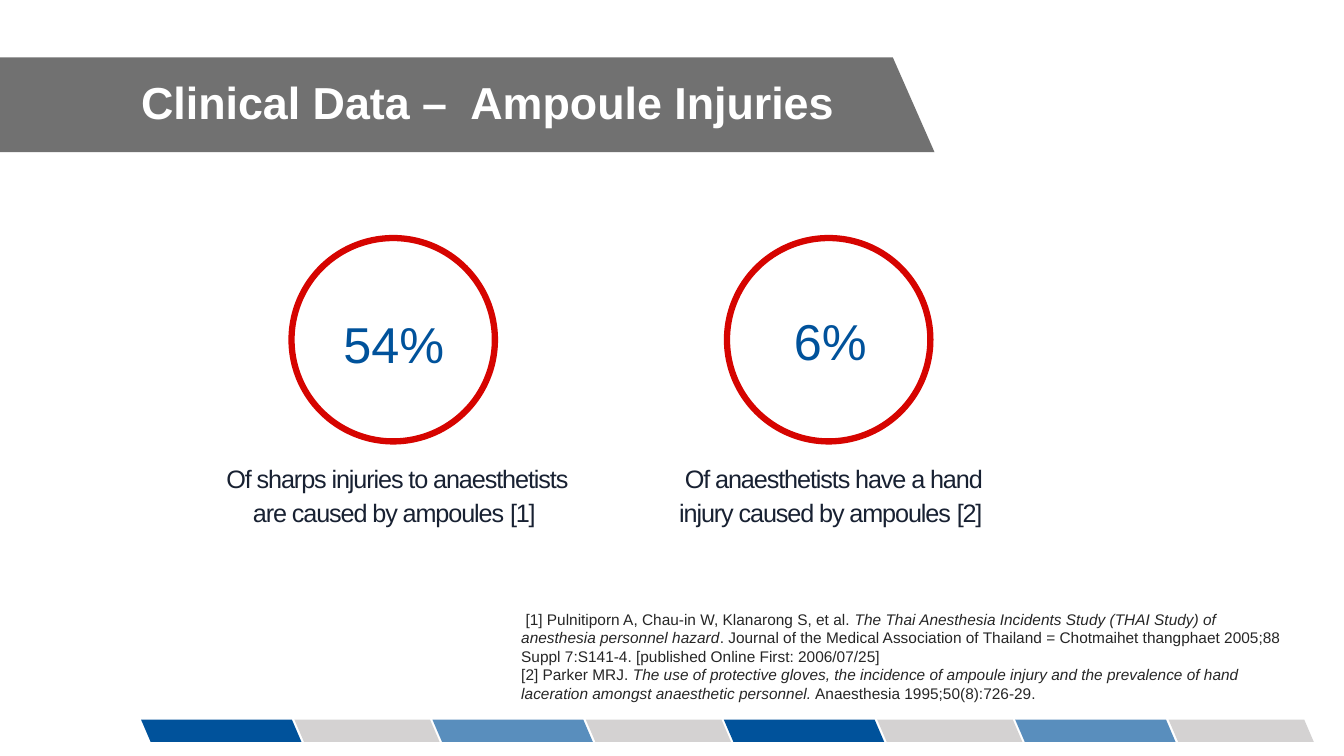
import pptx
import pptx.util
import pptx.dml.color
import pptx.enum.shapes
import pptx.enum.text
import pptx.oxml
import pptx.oxml.ns

Inches, Pt = pptx.util.Inches, pptx.util.Pt
KIND = pptx.enum.shapes.MSO_SHAPE
ALIGN = pptx.enum.text.PP_ALIGN
ANCHOR = pptx.enum.text.MSO_ANCHOR

WIDE, HIGH = 13.33, 7.5
FONT = "Arial"
HUES = {"dark": "262626", "white": "FFFFFF", "blue": "00529B",
        "grey": "757070", "red": "D60400", "navy": "182132"}

# Boxes are (left, top, width, height) in percent of the slide.
TITLE = "Clinical Data –  Ampoule Injuries"
BANNER = (-6.75, 7.6, 76.29, 12.53)
HEAD = (10.5, 9.07, 60.54, 9.6)

STATS = [
    {"ring": (21.46, 31.07, 15.6, 27.73),
     "value": "54%", "spot": (24.16, 41.2, 10.13, 8.27),
     "label": "Of sharps injuries to anaesthetists are caused by ampoules ",
     "cite": "[1]", "below": (15, 60.53, 28.51, 9.33)},
    {"ring": (53.86, 31.07, 15.6, 27.73),
     "value": "6%", "spot": (56.64, 40.8, 10.13, 8.27),
     "label": "Of anaesthetists have a hand injury caused by ampoules ",
     "cite": "[2]", "below": (48.76, 60.53, 25.96, 9.33)},
]

# Each reference is authors, work (italic), journal.
REFS = [
    (" [1] Pulnitiporn A, Chau-in W, Klanarong S, et al. ",
     "The Thai Anesthesia Incidents Study (THAI Study) of anesthesia "
     "personnel hazard",
     ". Journal of the Medical Association of Thailand = Chotmaihet "
     "thangphaet 2005;88 Suppl 7:S141-4. [published Online First: 2006/07/25]"),
    ("[2] Parker MRJ. ",
     "The use of protective gloves, the incidence of ampoule injury and the "
     "prevalence of hand laceration amongst anaesthetic personnel.",
     " Anaesthesia 1995;50(8):726-29."),
]
NOTES = (38.11, 80, 58.74, 13.6)

# Footer pairs: a grey tile, then a blue one; opacity of the blue alternates.
TINTS = [100, 65, 100, 65]
STEP, BLUE_X, GREY_X = 21.68, 10.5, 21.91
FOOT_Y, FOOT_H, BLUE_W, GREY_W = 95.2, 2.93, 11.93, 10.8


def place(box):
    sizes = (WIDE, HIGH, WIDE, HIGH)
    return [Inches(part * size / 100) for part, size in zip(box, sizes)]


def tint(name):
    return pptx.dml.color.RGBColor.from_string(HUES[name])


def draw(slide, kind, box, hue, adj, alpha=100):
    shape = slide.shapes.add_shape(kind, *place(box))
    shape.shadow.inherit = False
    shape.adjustments[0] = adj
    shape.fill.solid()
    shape.fill.fore_color.rgb = tint(hue)
    shape.line.fill.background()
    if alpha < 100:
        color = shape.fill._xPr.find(".//" + pptx.oxml.ns.qn("a:srgbClr"))
        node = pptx.oxml.parse_xml(
            "<a:alpha %s val='%d'/>" % (pptx.oxml.ns.nsdecls("a"), alpha * 1000))
        color.append(node)
    return shape


def slant(slide, box, hue, adj, alpha=100):
    """Draw a parallelogram leaning to the left."""
    shape = draw(slide, KIND.PARALLELOGRAM, box, hue, adj, alpha)
    shape._element.spPr.xfrm.set("flipH", "1")


def write(slide, box, paras, size, hue, inset=(0, 0, 0, 0)):
    """Add a text box; each paragraph is a sequence of run texts."""
    frame = slide.shapes.add_textbox(*place(box)).text_frame
    frame.word_wrap = True
    (frame.margin_left, frame.margin_top,
     frame.margin_right, frame.margin_bottom) = [Inches(gap) for gap in inset]
    for i, parts in enumerate(paras):
        para = frame.add_paragraph() if i else frame.paragraphs[0]
        for part in parts:
            run = para.add_run()
            run.text = part
            run.font.size = Pt(size)
            run.font.name = FONT
            run.font.color.rgb = tint(hue)
    return frame


def center(para, first):
    """Centre a paragraph; first is the indent of its first line."""
    para.alignment = ALIGN.CENTER
    para.space_before = Pt(1.2)
    props = para._p.get_or_add_pPr()
    props.set("marL", str(Inches(0.02)))
    props.set("indent", str(Inches(first)))


def show(slide, stat):
    draw(slide, KIND.DONUT, stat["ring"], "red", 0.03)
    inset = (0, 0.02, 0, 0)
    frame = write(slide, stat["spot"], [[stat["value"]]], 36, "blue", inset)
    center(frame.paragraphs[0], 0)
    words = [stat["label"], stat["cite"]]
    frame = write(slide, stat["below"], [words], 18, "navy", inset)
    para = frame.paragraphs[0]
    center(para, 0.05)
    para.line_spacing = 1.13
    for run, gap in zip(para.runs, (-80, -90)):
        run.font._element.set("spc", str(gap))


def main():
    deck = pptx.Presentation()
    deck.slide_width, deck.slide_height = Inches(WIDE), Inches(HIGH)
    slide = deck.slides.add_slide(deck.slide_layouts[6])

    slant(slide, BANNER, "dark", 0.44, 65)
    frame = write(slide, HEAD, [[TITLE]], 32, "white")
    frame.vertical_anchor = ANCHOR.MIDDLE
    frame.paragraphs[0].line_spacing = 0.9
    frame.paragraphs[0].runs[0].font.bold = True

    for i, alpha in enumerate(TINTS):
        shift = i * STEP
        slant(slide, (GREY_X + shift, FOOT_Y, GREY_W, FOOT_H), "grey", 0.43, 31)
        slant(slide, (BLUE_X + shift, FOOT_Y, BLUE_W, FOOT_H), "blue", 0.43, alpha)

    frame = write(slide, NOTES, REFS, 11, "dark", (0.09, 0.05, 0.09, 0.05))
    for para in frame.paragraphs:
        para.runs[1].font.italic = True

    for stat in STATS:
        show(slide, stat)
    deck.save("out.pptx")


if __name__ == "__main__":
    main()
